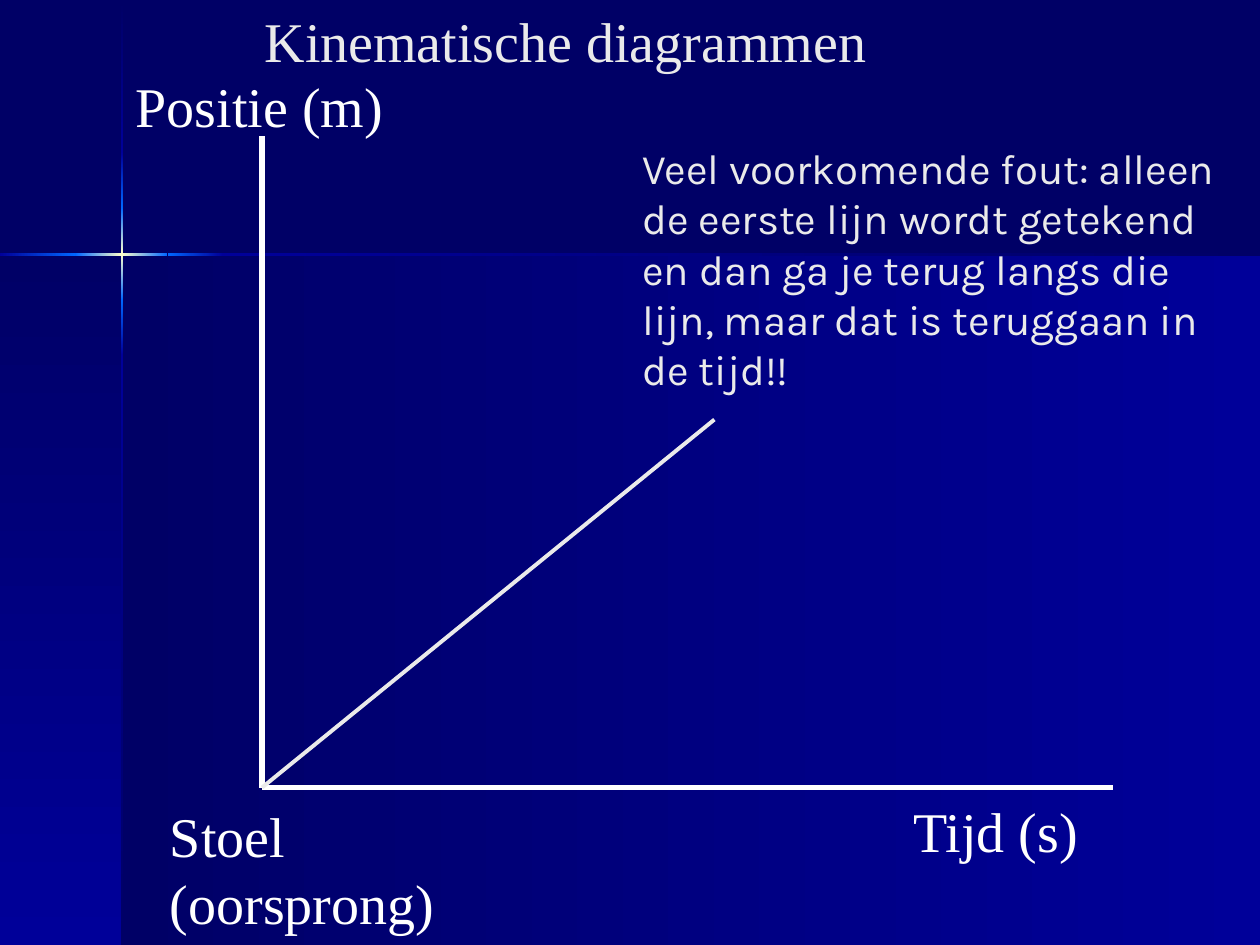
import copy

import pptx
import pptx.dml.color
import pptx.enum.shapes
import pptx.enum.text
import pptx.oxml.ns
import pptx.util
from pptx.util import Inches

RGBColor = pptx.dml.color.RGBColor
NAVY = RGBColor(0x00, 0x00, 0x66)
BLUE = RGBColor(0x00, 0x00, 0x99)
BRIGHT = RGBColor(0x00, 0x66, 0xFF)
CREAM = RGBColor(0xFF, 0xFF, 0xCC)
WHITE = RGBColor(0xFF, 0xFF, 0xFF)
PALE = RGBColor(0xEA, 0xEA, 0xEA)

SERIF = "Times New Roman"
SANS = "Karla"
DOWN, ACROSS = 270, 0


def add_band(page, box, colors, angle):
    """Rectangle with a gradient of evenly spaced colours."""
    band = page.shapes.add_shape(
        pptx.enum.shapes.MSO_SHAPE.RECTANGLE, *map(Inches, box))
    band.shadow.inherit = False
    band.line.fill.background()
    band.fill.gradient()
    band.fill.gradient_angle = angle
    stop_list = band._element.spPr.find(".//" + pptx.oxml.ns.qn("a:gsLst"))
    for _ in colors[2:]:
        stop_list.append(copy.deepcopy(stop_list[-1]))
    for index, (stop, color) in enumerate(zip(band.fill.gradient_stops, colors)):
        stop.position = index / (len(colors) - 1)
        stop.color.rgb = color


def add_backdrop(page, box):
    """Two blue panels and a glowing cross where they meet."""
    left, top, width, height = box
    right, bottom = left + width, top + height
    cross_x, cross_y, thick = left + 0.97, top + 2.02, 0.02
    add_band(page, (cross_x, cross_y, right - cross_x, bottom - cross_y),
             (NAVY, BLUE), ACROSS)
    add_band(page, (left, cross_y, cross_x - left, bottom - cross_y),
             (NAVY, BLUE), DOWN)

    upright = [
        (top, top + 1.21, (NAVY, BLUE)),
        (top + 2.82, bottom, (BLUE, NAVY)),
        (top + 2.38, top + 2.82, (BRIGHT, BLUE)),
        (top + 1.21, top + 1.65, (BLUE, BRIGHT)),
        (top + 1.65, top + 2.38, (BRIGHT, CREAM, BRIGHT)),
    ]
    for start, end, colors in upright:
        add_band(page, (cross_x - thick / 2, start, thick, end - start), colors, DOWN)

    level = [
        (left + 1.77, right, (BLUE, NAVY)),
        (left, left + 0.6, (BLUE, BRIGHT)),
        (left + 1.33, left + 1.77, (BRIGHT, BLUE)),
        (left + 0.6, left + 1.33, (BRIGHT, CREAM, BRIGHT)),
    ]
    for start, end, colors in level:
        add_band(page, (start, cross_y - thick / 2, end - start, thick), colors, ACROSS)


def add_line(page, start, end, color, weight):
    line = page.shapes.add_connector(
        pptx.enum.shapes.MSO_CONNECTOR.STRAIGHT, *map(Inches, start + end))
    line.line.color.rgb = color
    line.line.width = pptx.util.Pt(weight)
    line._element.spPr.get_or_add_ln().addnext(
        pptx.oxml.parse_xml("<a:effectLst %s/>" % pptx.oxml.ns.nsdecls("a")))


def write(shape, box, text, font, size, color, wrap=False):
    """Place a text shape and fill it with one left-aligned paragraph."""
    shape.left, shape.top, shape.width, shape.height = map(Inches, box)
    frame = shape.text_frame
    frame.word_wrap = wrap
    frame.auto_size = pptx.enum.text.MSO_AUTO_SIZE.NONE
    frame.vertical_anchor = pptx.enum.text.MSO_ANCHOR.TOP
    para = frame.paragraphs[0]
    para.alignment = pptx.enum.text.PP_ALIGN.LEFT
    span = para.add_run()
    span.text = text
    span.font.name = font
    span.font.size = pptx.util.Pt(size)
    span.font.color.rgb = color
    return frame


def add_text(page, *args, **options):
    box = page.shapes.add_textbox(0, 0, 0, 0)
    return write(box, *args, **options)


def add_axes(page, box):
    """Position-time axes with their labels; the box is the plot area."""
    left, top, width, height = box
    bottom = top + height
    add_line(page, (left, top), (left, bottom), WHITE, 3)
    add_line(page, (left, bottom), (left + width, bottom), WHITE, 3)
    add_text(page, (left - 1.1, top - 0.56, 2.16, 0.63),
             "Positie (m)", SERIF, 32, WHITE)
    add_text(page, (left + width - 1.68, bottom + 0.02, 1.52, 0.63),
             "Tijd (s)", SERIF, 32, WHITE)
    origin = add_text(page, (left - 0.83, bottom + 0.06, 3.32, 1.17),
                      "Stoel (oorsprong)", SERIF, 32, WHITE, wrap=True)
    origin.margin_right = Inches(0.5)


def add_motion(page, box):
    """Straight graph from the lower left to the upper right of the box."""
    left, top, width, height = box
    add_line(page, (left, top + height), (left + width, top), PALE, 2.25)


def main():
    deck = pptx.Presentation()
    deck.slide_width, deck.slide_height = Inches(10), Inches(7.5)
    page = deck.slides.add_slide(deck.slide_layouts[5])
    page.background.fill.solid()
    page.background.fill.fore_color.rgb = NAVY

    add_backdrop(page, (0, 0, 10, 7.5))
    add_axes(page, (2.08, 1.08, 6.75, 5.17))
    write(page.shapes.title, (2, 0, 5.03, 0.64),
          "Kinematische diagrammen", SERIF, 32, PALE)
    add_text(page, (5, 1.08, 5, 2.1),
             "Veel voorkomende fout: alleen de eerste lijn wordt getekend "
             "en dan ga je terug langs die lijn, maar dat is teruggaan in de tijd!!",
             SANS, 24, PALE, wrap=True)
    add_motion(page, (2.08, 3.33, 3.59, 2.92))
    deck.save("out.pptx")


if __name__ == "__main__":
    main()
